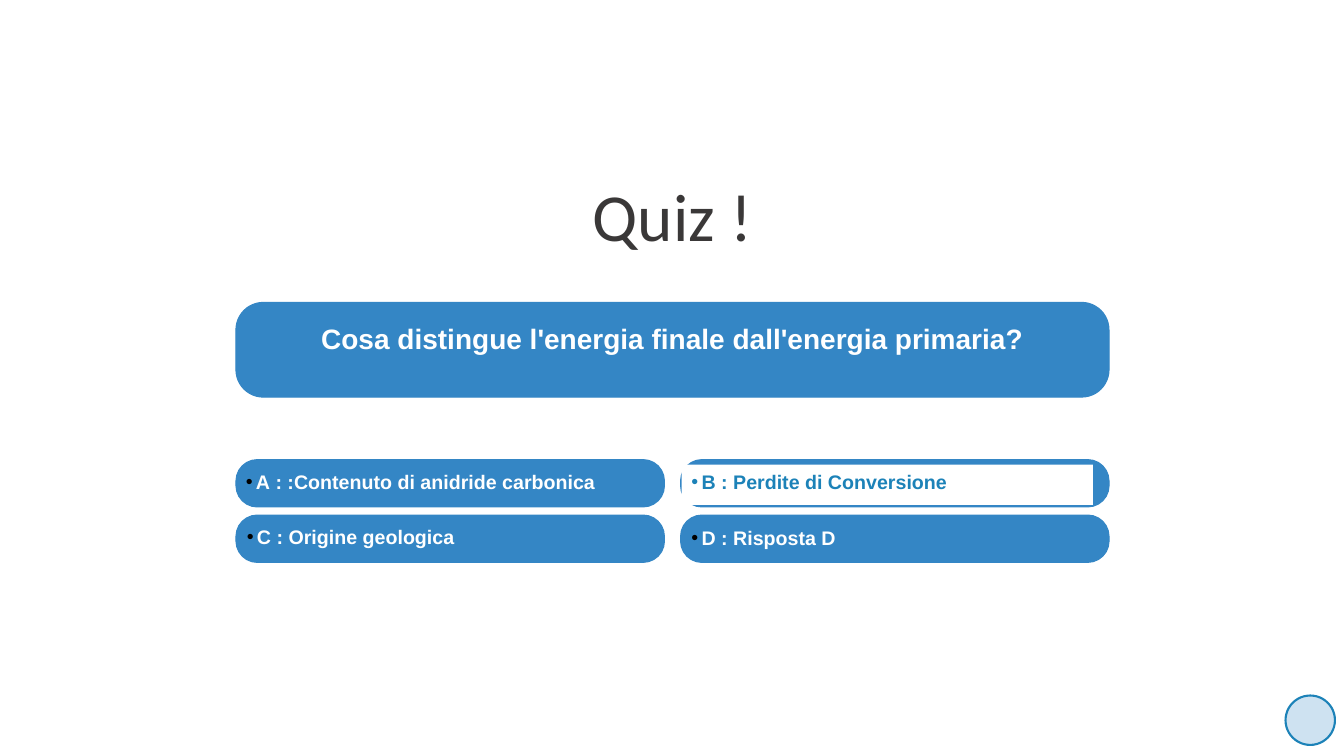
"""Build the energy quiz slide."""
import pptx
import pptx.chart.data
import pptx.dml.color
import pptx.enum.shapes
import pptx.enum.text
import pptx.oxml.ns
import pptx.util
from lxml import etree

Inches = pptx.util.Inches
Pt = pptx.util.Pt
RGBColor = pptx.dml.color.RGBColor
SHAPES = pptx.enum.shapes.MSO_SHAPE
ANCHOR = pptx.enum.text.MSO_ANCHOR
ALIGN = pptx.enum.text.PP_ALIGN
qn = pptx.oxml.ns.qn

BLUE = RGBColor(0x34, 0x86, 0xC5)
ACCENT = RGBColor(0x1C, 0x82, 0xB8)
GREY = RGBColor(0x3A, 0x38, 0x38)
WHITE = RGBColor(0xFF, 0xFF, 0xFF)
BLACK = RGBColor(0, 0, 0)

ANSWERS = [
    ("A\u00a0: :Contenuto di anidride carbonica", 0, 0.05, 4.17),
    ("B\u00a0: Perdite di Conversione", 0.01, 0.05, 4.08),
    ("C\u00a0: Origine geologica", 0.01, 0.05, 4.08),
    ("D\u00a0: Risposta D", 0.01, 0.06, 3.35),
]
CORRECT = 1


def style_text(paragraph, font_name, size, color, bold=False):
    """Set the font of a paragraph's runs."""
    for run in paragraph.runs:
        run.font.name = font_name
        run.font.size = Pt(size)
        run.font.bold = bold
        run.font.color.rgb = color


def add_panel(slide, kind, left, top, width, height, line_color, line_width):
    """Add a flat blue shape with an outline."""
    panel = slide.shapes.add_shape(
        kind, Inches(left), Inches(top), Inches(width), Inches(height))
    panel.shadow.inherit = False
    panel.fill.solid()
    panel.fill.fore_color.rgb = BLUE
    panel.line.color.rgb = line_color
    panel.line.width = Pt(line_width)
    return panel


def add_bullet(paragraph, color):
    """Give a paragraph a hanging round bullet."""
    properties = paragraph._p.get_or_add_pPr()
    properties.set("marL", str(Inches(0.1)))
    properties.set("indent", str(-Inches(0.1)))
    bullet_color = etree.SubElement(properties, qn("a:buClr"))
    etree.SubElement(bullet_color, qn("a:srgbClr"), val=str(color))
    etree.SubElement(properties, qn("a:buFont"), typeface="Arial")
    etree.SubElement(properties, qn("a:buChar"), char="•")


def add_title(slide, left, top, width, height):
    """Place the slide title."""
    title = slide.shapes.title
    title.left, title.top = Inches(left), Inches(top)
    title.width, title.height = Inches(width), Inches(height)
    title.text_frame.text = "Quiz !"
    title.text_frame.vertical_anchor = ANCHOR.MIDDLE
    heading = title.text_frame.paragraphs[0]
    heading.alignment = ALIGN.CENTER
    style_text(heading, "Calibri", 48, GREY)


def add_question(slide, left, top, width, height):
    """Add the question banner."""
    banner = add_panel(slide, SHAPES.ROUNDED_RECTANGLE,
                       left, top, width, height, BLUE, 0.75)
    banner.adjustments[0] = 0.29
    frame = banner.text_frame
    frame.word_wrap = True
    frame.vertical_anchor = ANCHOR.MIDDLE
    frame.margin_bottom = Inches(0.28)
    frame.text = "Cosa distingue l'energia finale dall'energia primaria?"
    frame.paragraphs[0].alignment = ALIGN.CENTER
    style_text(frame.paragraphs[0], "Arial", 20, WHITE, True)


def add_answer(slide, left, top, width, height, answer, is_correct):
    """Add one answer panel and its label, highlighted when correct."""
    panel = add_panel(slide, SHAPES.ROUNDED_RECTANGLE,
                      left, top, width, height, BLUE, 0.75)
    panel.adjustments[0] = 0.45
    wording, shift_x, shift_y, label_width = answer
    label = slide.shapes.add_textbox(
        Inches(left + shift_x), Inches(top + shift_y),
        Inches(label_width), Inches(0.4))
    if is_correct:
        label.fill.solid()
        label.fill.fore_color.rgb = WHITE
    frame = label.text_frame
    frame.word_wrap = True
    frame.text = wording
    add_bullet(frame.paragraphs[0], ACCENT if is_correct else BLACK)
    style_text(frame.paragraphs[0], "Arial", 14,
               ACCENT if is_correct else WHITE, True)


def add_answers(slide, left, top, width, height):
    """Lay the answers out in a two by two grid."""
    panel_width, panel_height = 4.25, 0.47
    for index, answer in enumerate(ANSWERS):
        row, column = divmod(index, 2)
        add_answer(slide,
                   left + column * (width - panel_width),
                   top + row * (height - panel_height),
                   panel_width, panel_height, answer, index == CORRECT)


def add_badge(slide, left, top, size):
    """Add the pale round corner badge."""
    badge = add_panel(slide, SHAPES.OVAL, left, top, size, size, ACCENT, 1.5)
    fill_color = badge.fill._xPr.find(qn("a:solidFill"))[0]
    etree.SubElement(fill_color, qn("a:alpha"), val="24000")


def main():
    """Build and save the presentation."""
    presentation = pptx.Presentation()
    presentation.slide_width = Inches(13.33)
    presentation.slide_height = Inches(7.5)
    slide = presentation.slides.add_slide(presentation.slide_layouts[5])
    left, width = 2.34, 8.66
    add_title(slide, left, 1.59, width, 1.07)
    add_badge(slide, 12.75, 6.9, 0.49)
    add_question(slide, left, 3, width, 0.94)
    add_answers(slide, left, 4.56, width, 1.02)
    presentation.save("out.pptx")


if __name__ == "__main__":
    main()
